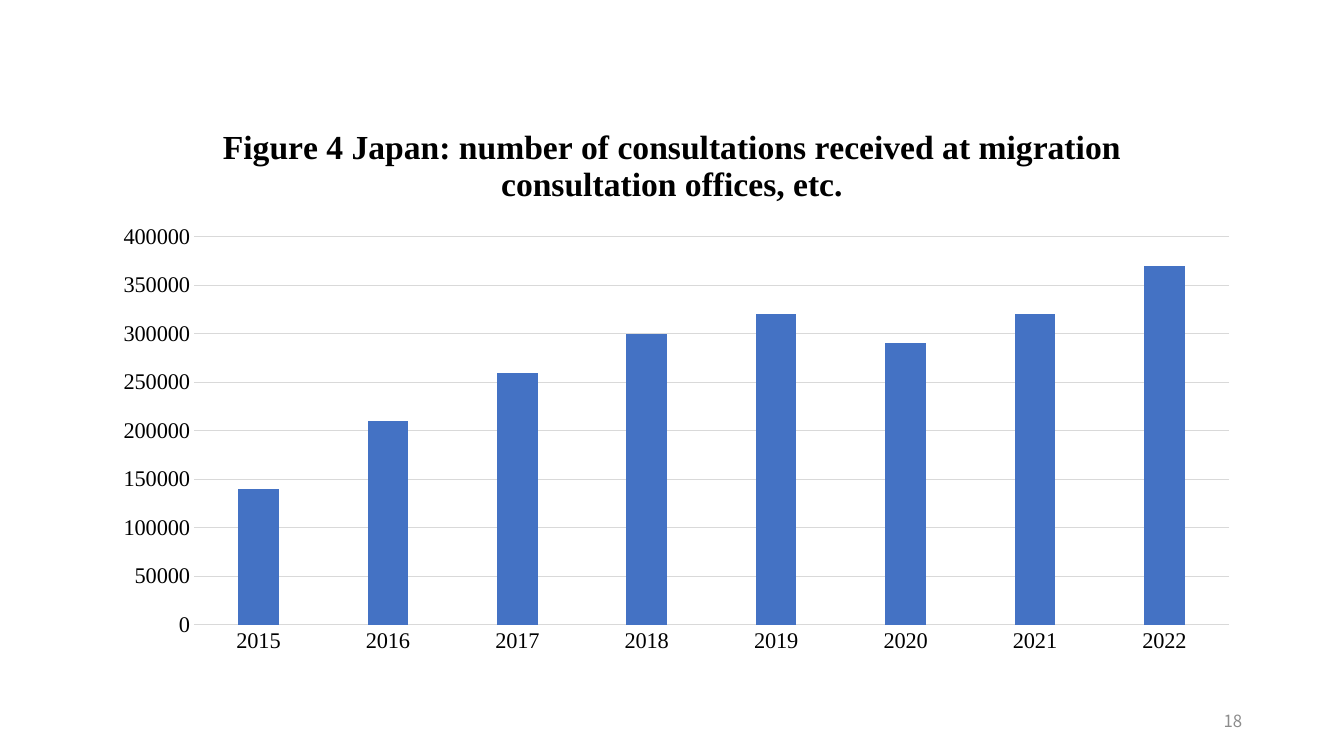
from lxml.etree import SubElement
from pptx import Presentation
from pptx.chart.data import CategoryChartData
from pptx.dml.color import RGBColor
from pptx.enum.chart import XL_CHART_TYPE, XL_TICK_MARK
from pptx.enum.text import MSO_ANCHOR, PP_ALIGN
from pptx.oxml.ns import qn
from pptx.util import Inches, Pt

CONSULTATIONS = {
    "2015": 140000, "2016": 210000, "2017": 260000, "2018": 300000,
    "2019": 320000, "2020": 290000, "2021": 320000, "2022": 370000,
}
TITLE = "Figure 4 Japan: number of consultations received at migration consultation offices, etc."


def color(hex_value):
    return RGBColor.from_string(hex_value)


def set_values(target, values):
    for name, value in values.items():
        setattr(target, name, value)


class SlideBuilder:
    """Holds the style and the current slide, and adds its elements."""

    chart_font = "Times New Roman"
    number_font = "Noto Sans CJK JP"
    black = "000000"
    bar_blue = "4472C4"
    rule_gray = "D9D9D9"
    number_gray = "8C8C8C"

    def __init__(self, presentation):
        self.slide = presentation.slides.add_slide(presentation.slide_layouts[6])

    def style_font(self, font, name, size, hex_value, bold=False):
        set_values(font, {"name": name, "size": Pt(size), "bold": bold})
        font.color.rgb = color(hex_value)

    def style_line(self, line):
        line.color.rgb = color(self.rule_gray)
        line.width = Pt(0.75)

    def place(self, element, settings):
        layout = element.find(qn("c:layout"))
        if layout is None:
            layout = element.makeelement(qn("c:layout"), {})
            element.insert(0, layout)
        for child in list(layout):
            layout.remove(child)
        manual = SubElement(layout, qn("c:manualLayout"))
        for name, value in settings.items():
            SubElement(manual, qn(f"c:{name}")).set("val", str(value))

    def add_column_chart(self, title, values, left, top, width, height):
        data = CategoryChartData()
        data.categories = list(values)
        data.add_series("Series 1", list(values.values()))
        chart = self.slide.shapes.add_chart(
            XL_CHART_TYPE.COLUMN_CLUSTERED, Inches(left), Inches(top),
            Inches(width), Inches(height), data).chart
        chart.has_legend = False
        self.style_font(chart.font, self.chart_font, 16, self.black)
        self.add_chart_title(chart, title)
        plot = chart.plots[0]
        set_values(plot, {"gap_width": 219, "overlap": -27, "vary_by_categories": False})
        fill = plot.series[0].format.fill
        fill.solid()
        fill.fore_color.rgb = color(self.bar_blue)
        self.style_axes(chart)
        self.place(chart.element.find(".//" + qn("c:plotArea")), {
            "layoutTarget": "inner", "xMode": "edge", "yMode": "edge",
            "x": 0.08, "y": 0.24, "w": 0.9, "h": 0.69})

    def add_chart_title(self, chart, title):
        chart.has_title = True
        chart.chart_title.include_in_layout = False
        paragraph = chart.chart_title.text_frame.paragraphs[0]
        paragraph.alignment = PP_ALIGN.CENTER
        run = paragraph.add_run()
        run.text = title
        self.style_font(run.font, self.chart_font, 24, self.black, bold=True)
        self.place(chart.element.find(".//" + qn("c:title")), {
            "xMode": "edge", "yMode": "edge", "x": 0.1, "y": 0.03})

    def style_axes(self, chart):
        for axis in (chart.category_axis, chart.value_axis):
            set_values(axis, {"major_tick_mark": XL_TICK_MARK.NONE,
                              "minor_tick_mark": XL_TICK_MARK.NONE})
            self.style_font(axis.tick_labels.font, self.chart_font, 16, self.black)
        self.style_line(chart.category_axis.format.line)
        axis = chart.value_axis
        set_values(axis, {"minimum_scale": 0, "maximum_scale": 400000,
                          "major_unit": 50000, "has_major_gridlines": True})
        set_values(axis.tick_labels, {"number_format": "0", "number_format_is_linked": False})
        axis.format.line.fill.background()
        self.style_line(axis.major_gridlines.format.line)

    def add_slide_number(self, number, left, top, width, height):
        shape = self.slide.shapes.add_textbox(
            Inches(left), Inches(top), Inches(width), Inches(height))
        set_values(shape.text_frame, {"word_wrap": True, "vertical_anchor": MSO_ANCHOR.MIDDLE})
        paragraph = shape.text_frame.paragraphs[0]
        paragraph.alignment = PP_ALIGN.RIGHT
        run = paragraph.add_run()
        run.text = number
        self.style_font(run.font, self.number_font, 12, self.number_gray)


def main():
    presentation = Presentation()
    set_values(presentation, {"slide_width": Inches(13.33), "slide_height": Inches(7.5)})
    builder = SlideBuilder(presentation)
    builder.add_slide_number("18", 9.42, 6.95, 3, 0.4)
    builder.add_column_chart(TITLE, CONSULTATIONS, 1.01, 1.01, 11.41, 5.58)
    presentation.save("out.pptx")


if __name__ == "__main__":
    main()
